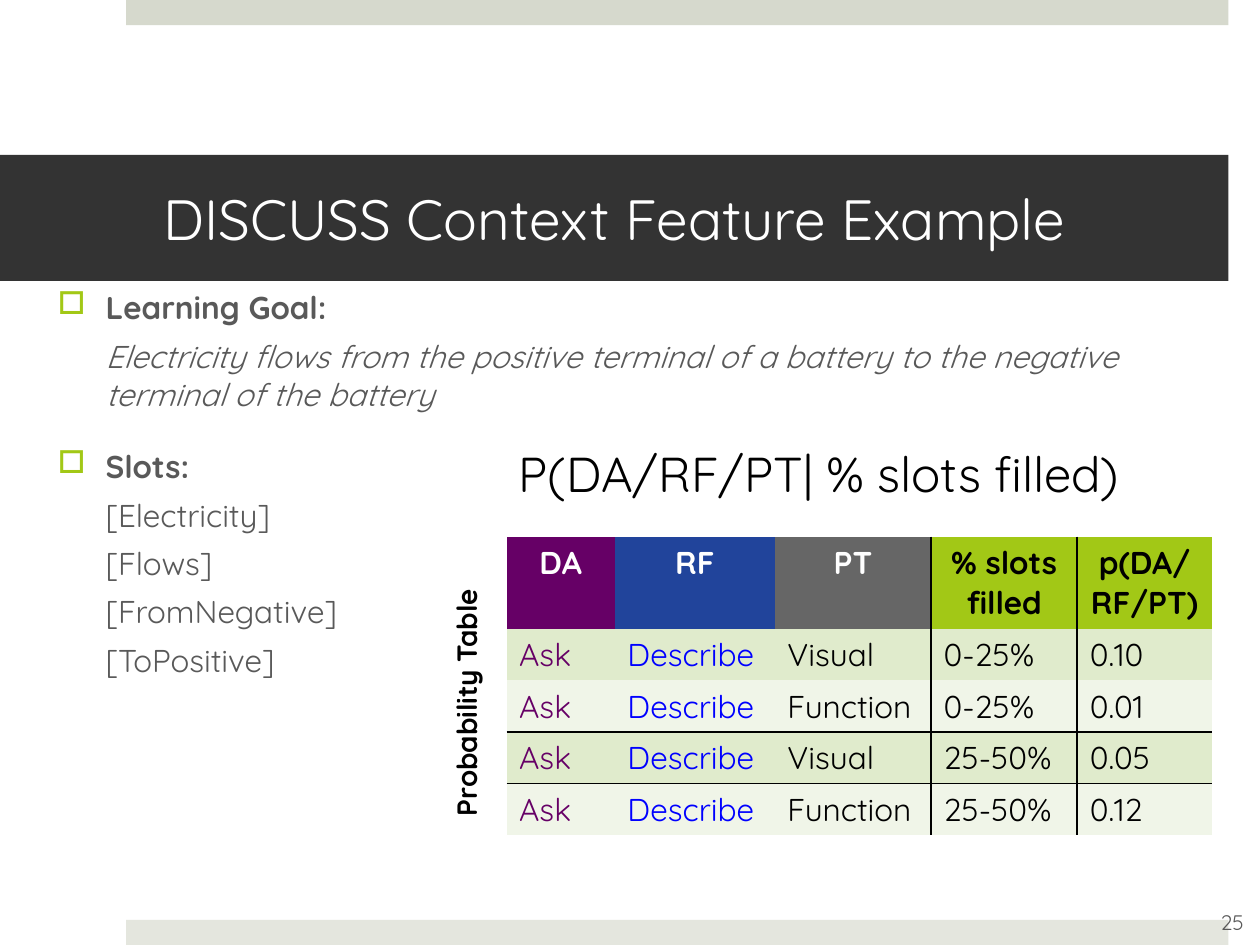
"""Build the DISCUSS context feature example slide."""
from dataclasses import dataclass

from lxml import etree
from pptx import Presentation
from pptx.dml.color import RGBColor
from pptx.enum.shapes import MSO_SHAPE as Shape
from pptx.enum.text import MSO_ANCHOR as Anchor, PP_ALIGN as Align
from pptx.oxml.ns import qn
from pptx.util import Inches, Pt


@dataclass(frozen=True)
class Theme:
    """Colours, type sizes and font of the slide."""
    font: str = "Quicksand"
    title: float = 32.4
    formula: int = 28
    body: int = 18
    label: int = 16
    number: int = 12
    black: str = "000000"
    white: str = "FFFFFF"
    dark: str = "333333"
    text: str = "595959"
    accent: str = "A2C816"
    purple: str = "660066"
    blue: str = "21449B"
    link: str = "0000FF"
    grey: str = "666666"
    top_band: str = "D6D9CD"
    bottom_band: str = "E4E6DE"
    stripes: tuple = ("E0EBCC", "F0F5E8")


THEME = Theme()
NO_GRID_STYLE = "{2D5ABB26-0587-4C30-8999-92F81FD0307C}"
OUTLINE = [
    ("Learning Goal:", ["Electricity flows from the positive terminal of a battery "
                        "to the negative terminal of the battery"], True),
    ("Slots:", ["[Electricity]", "[Flows]", "[FromNegative]", "[ToPositive]"], False),
]
HEADERS = [
    ("DA", 0.86, THEME.white, THEME.purple, THEME.purple),
    ("RF", 1.27, THEME.white, THEME.blue, THEME.link),
    ("PT", 1.24, THEME.white, THEME.grey, THEME.black),
    ("% slots filled", 1.16, THEME.black, THEME.accent, THEME.black),
    ("p(DA/RF/PT)", 1.07, THEME.black, THEME.accent, THEME.black),
]
ROWS = [
    ("Ask", "Describe", "Visual", "0-25%", "0.10"),
    ("Ask", "Describe", "Function", "0-25%", "0.01"),
    ("Ask", "Describe", "Visual", "25-50%", "0.05"),
    ("Ask", "Describe", "Function", "25-50%", "0.12"),
]
RULE_COLUMN, RULE_ROW = 3, 3


def inches(box):
    """Turn left, top, width and height into lengths."""
    return [Inches(value) for value in box]


def style(para, size, color, bold=False, italic=False, align=Align.LEFT):
    """Set the font and alignment of a paragraph."""
    font = para.font
    font.name, font.size, font.bold, font.italic = THEME.font, Pt(size), bold, italic
    font.color.rgb = RGBColor.from_string(color)
    para.alignment = align


def add_band(page, box, color):
    """Add a plain filled rectangle."""
    band = page.shapes.add_shape(Shape.RECTANGLE, *inches(box))
    band.shadow.inherit = False
    band.fill.solid()
    band.fill.fore_color.rgb = RGBColor.from_string(color)
    band.line.fill.background()
    return band


def add_label(page, box, text, size, color, wrap=True, anchor=Anchor.TOP, **font):
    """Add a text box with one paragraph."""
    label = page.shapes.add_textbox(*inches(box))
    frame = label.text_frame
    frame.word_wrap, frame.vertical_anchor = wrap, anchor
    frame.text = text
    style(frame.paragraphs[0], size, color, **font)
    return label


def add_title(page, box, text):
    """Add the dark title bar."""
    frame = add_band(page, box, THEME.dark).text_frame
    frame.word_wrap, frame.vertical_anchor = True, Anchor.MIDDLE
    frame.margin_left, frame.margin_right = Inches(1.3), Inches(0.3)
    frame.text = text
    style(frame.paragraphs[0], THEME.title, THEME.white)


def indent(para, bullet):
    """Indent a paragraph, hanging a square bullet if asked."""
    props = para._p.get_or_add_pPr()
    props.set("marL", str(Inches(0.38)))
    props.set("indent", str(Inches(-0.38 if bullet else 0)))
    if bullet:
        color = etree.SubElement(props, qn("a:buClr"))
        etree.SubElement(color, qn("a:srgbClr"), val=THEME.accent)
        etree.SubElement(props, qn("a:buChar"), char="□")
    else:
        etree.SubElement(props, qn("a:buNone"))


def add_outline(page, box, groups):
    """Add bulleted headings with their indented lines."""
    frame = page.shapes.add_textbox(*inches(box)).text_frame
    frame.word_wrap = True
    lines = [line for heading, details, italic in groups
             for line in [(heading, True, False)]
             + [(detail, False, italic) for detail in details]]
    for index, (text, heading, italic) in enumerate(lines):
        para = frame.add_paragraph() if index else frame.paragraphs[0]
        para.text = text
        para.level = 0 if heading else 1
        para.space_before = Pt(20 if heading else 6)
        indent(para, heading)
        style(para, THEME.body, THEME.text, heading, italic)


def add_borders(cell, sides):
    """Draw thin black lines on the given sides of a cell."""
    props = cell._tc.get_or_add_tcPr()
    for side in sides:
        line = etree.SubElement(props, qn(f"a:ln{side}"), w=str(Pt(1)))
        fill = etree.SubElement(line, qn("a:solidFill"))
        etree.SubElement(fill, qn("a:srgbClr"), val=THEME.black)


def fill_cell(cell, row, column, text):
    """Write and colour one cell of the probability table."""
    _, _, header_color, header_fill, body_color = HEADERS[column]
    header = row == 0
    edges = {"L": column == RULE_COLUMN, "R": column == RULE_COLUMN - 1,
             "T": row == RULE_ROW, "B": row == RULE_ROW - 1}
    add_borders(cell, [side for side, drawn in edges.items() if drawn])
    cell.fill.solid()
    cell.fill.fore_color.rgb = RGBColor.from_string(
        header_fill if header else THEME.stripes[(row - 1) % 2])
    cell.text = text
    style(cell.text_frame.paragraphs[0], THEME.body,
          header_color if header else body_color,
          bold=header, align=Align.CENTER if header else Align.LEFT)


def add_probabilities(page, box):
    """Add the probability table."""
    grid = [[header[0] for header in HEADERS], *ROWS]
    table = page.shapes.add_table(len(grid), len(HEADERS), *inches(box)).table
    table.first_row = table.horz_banding = False
    table._tbl.tblPr.find(qn("a:tableStyleId")).text = NO_GRID_STYLE
    for column, header in zip(table.columns, HEADERS):
        column.width = Inches(header[1])
    for row, texts in enumerate(grid):
        table.rows[row].height = Inches(0.41 if row else 0.73)
        for column, text in enumerate(texts):
            fill_cell(table.cell(row, column), row, column, text)


def main():
    """Build and save the deck."""
    deck = Presentation()
    deck.slide_width, deck.slide_height = Inches(10), Inches(7.5)
    page = deck.slides.add_slide(deck.slide_layouts[6])
    add_band(page, (1, 0, 8.75, 0.2), THEME.top_band)
    add_band(page, (1, 7.3, 8.75, 0.2), THEME.bottom_band)
    add_title(page, (0, 1.23, 9.75, 1), "DISCUSS Context Feature Example")
    add_outline(page, (0.36, 2.24, 9.39, 4.71), OUTLINE)
    add_label(page, (9.53, 7.12, 0.5, 0.4), "25", THEME.number, THEME.text,
              anchor=Anchor.MIDDLE, align=Align.CENTER)
    add_probabilities(page, (4.02, 4.26, 5.6, 2.37))
    side = add_label(page, (2.54, 5.23, 2.32, 0.37), "Probability Table",
                     THEME.label, THEME.black, bold=True)
    side.rotation = 270
    add_label(page, (4.02, 3.47, 5.03, 0.57), "P(DA/RF/PT| % slots filled)",
              THEME.formula, THEME.black, wrap=False)
    deck.save("out.pptx")


if __name__ == "__main__":
    main()
